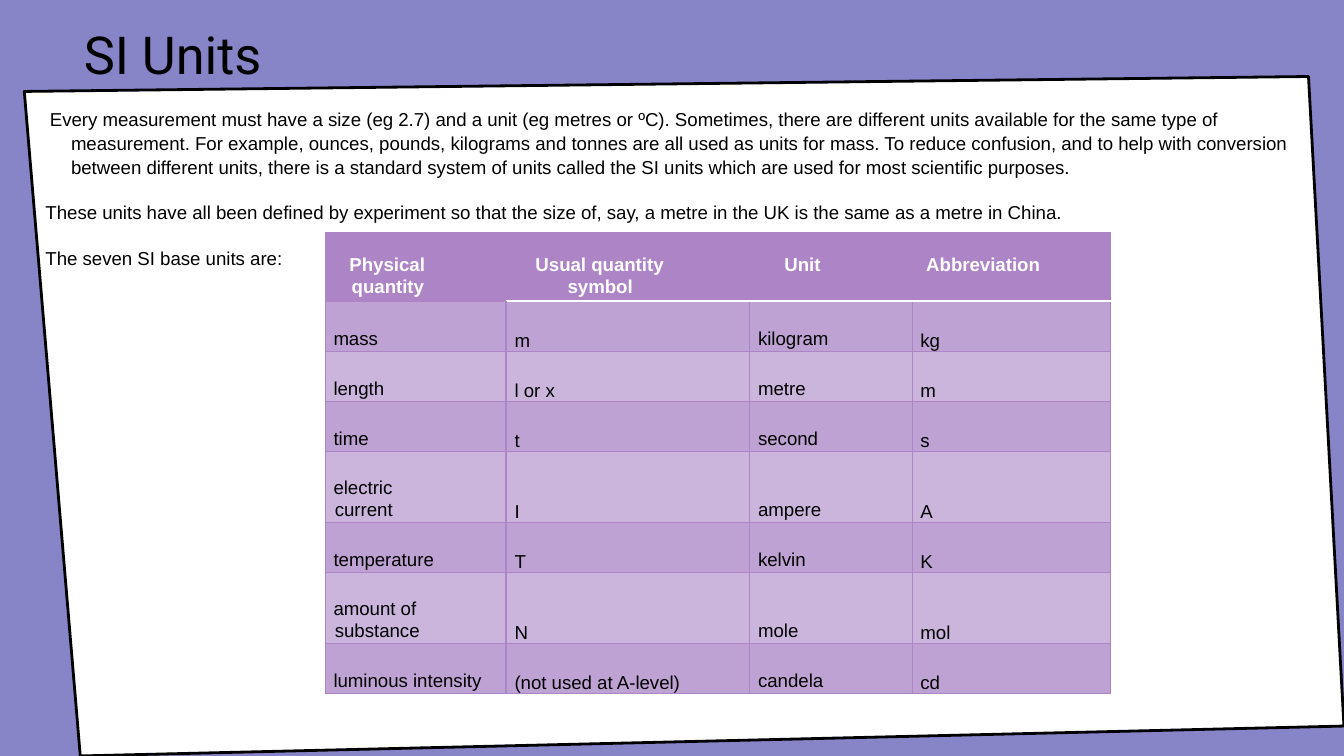
from lxml.etree import SubElement
from pptx import Presentation
from pptx.dml.color import RGBColor
from pptx.enum.text import MSO_ANCHOR, PP_ALIGN
from pptx.oxml.ns import qn
from pptx.util import Pt

COLORS = {
    "backdrop": "8784C7", "panel": "FFFFFF", "ink": "000000",
    "purple": "AD84C6", "dark_band": "BFA2D4", "light_band": "CBB5DC",
}
TITLE = "SI Units"
PARAGRAPHS = [
    "Every measurement must have a size (eg 2.7) and a unit (eg metres or ºC). Sometimes, there are "
    "different units available for the same type of measurement. For example, ounces, pounds, kilograms "
    "and tonnes are all used as units for mass. To reduce confusion, and to help with conversion between "
    "different units, there is a standard system of units called the SI units which are used for most "
    "scientific purposes.",
    "These units have all been defined by experiment so that the size of, say, a metre in the UK is the "
    "same as a metre in China.",
    "The seven SI base units are:",
]
UNITS = [
    ("Physical quantity", "Usual quantity symbol", "Unit", "Abbreviation"),
    ("mass", "m", "kilogram", "kg"),
    ("length", "l or x", "metre", "m"),
    ("time", "t", "second", "s"),
    ("electric current", "I", "ampere", "A"),
    ("temperature", "T", "kelvin", "K"),
    ("amount of substance", "N", "mole", "mol"),
    ("luminous intensity", "(not used at A-level)", "candela", "cd"),
]
WRAPPED = {"electric current", "amount of substance"}
PANEL_CORNERS = [(13.4, 48.8), (43, 404.6), (720, 389.2), (701.3, 40.8)]
COLUMN_WIDTHS = [97, 130.5, 87, 106.5]
BOTTOM_GAPS = [0.9, 0, 0.9, 0]
HEADER_HEIGHT, ROW_HEIGHT, WRAPPED_HEIGHT = 35.8, 26.8, 38


def rgb(name):
    return RGBColor.from_string(COLORS[name])


def write(paragraph, text, font="Arial", size=10, color="ink", bold=False,
          align=PP_ALIGN.LEFT, spacing=1.07, after=0, left=0, indent=0):
    """Fill a paragraph with one formatted run."""
    paragraph.alignment = align
    paragraph.line_spacing = spacing
    paragraph.space_before = Pt(0)
    paragraph.space_after = Pt(after)
    properties = paragraph._p.get_or_add_pPr()
    properties.set("marL", str(Pt(left)))
    properties.set("indent", str(Pt(indent)))
    run = paragraph.add_run()
    run.text = text
    run.font.name, run.font.size, run.font.bold = font, Pt(size), bold
    run.font.color.rgb = rgb(color)


def set_insets(frame, inset):
    frame.margin_left = frame.margin_right = frame.margin_top = frame.margin_bottom = Pt(inset)
    frame.word_wrap = True
    frame.vertical_anchor = MSO_ANCHOR.TOP


def set_border(cell, side, color="purple", width=0.5):
    line = SubElement(cell._tc.get_or_add_tcPr(), qn(f"a:ln{side}"), w=str(Pt(width)))
    fill = SubElement(line, qn("a:solidFill"))
    SubElement(fill, qn("a:srgbClr"), val=COLORS[color])


def add_panel(slide):
    builder = slide.shapes.build_freeform(*PANEL_CORNERS[0], scale=Pt(1))
    builder.add_line_segments(PANEL_CORNERS[1:], close=True)
    panel = builder.convert_to_shape()
    panel.shadow.inherit = False
    panel.fill.solid()
    panel.fill.fore_color.rgb = rgb("panel")
    panel.line.color.rgb = rgb("ink")
    panel.line.width = Pt(1.5)
    return panel


def add_title(slide):
    title = slide.shapes.title
    title.left, title.top, title.width, title.height = Pt(-3.6), Pt(8.6), Pt(192.2), Pt(58.3)
    set_insets(title.text_frame, 7.2)
    write(title.text_frame.paragraphs[0], TITLE, font="Roboto", size=28,
          align=PP_ALIGN.CENTER, spacing=0.9)


def add_explanation(slide):
    frame = slide.shapes.add_textbox(Pt(17.3), Pt(49.7), Pt(698.4), Pt(231)).text_frame
    set_insets(frame, 7.2)
    for number, text in enumerate(PARAGRAPHS):
        paragraph = frame.add_paragraph() if number else frame.paragraphs[0]
        write(paragraph, text, after=11.6, left=13.7, indent=-13.7 if number else -11.3)


def add_units(slide):
    heights = [HEADER_HEIGHT] + [
        WRAPPED_HEIGHT if row[0] in WRAPPED else ROW_HEIGHT for row in UNITS[1:]]
    table = slide.shapes.add_table(
        len(UNITS), len(COLUMN_WIDTHS), Pt(174.2), Pt(124.4),
        Pt(sum(COLUMN_WIDTHS)), Pt(sum(heights))).table
    table.horz_banding = False
    for column, width in zip(table.columns, COLUMN_WIDTHS):
        column.width = Pt(width)
    for r, (row, height) in enumerate(zip(UNITS, heights)):
        table.rows[r].height = Pt(height)
        header = r == 0
        band = "purple" if header else "dark_band" if r % 2 else "light_band"
        for c, text in enumerate(row):
            cell = table.cell(r, c)
            cell.margin_left = Pt(0)
            cell.margin_right = Pt(35 if header or text in WRAPPED else 0)
            cell.margin_top = Pt(11.3 if header else 0)
            cell.margin_bottom = Pt(0 if header else BOTTOM_GAPS[c])
            cell.vertical_anchor = MSO_ANCHOR.TOP if header else MSO_ANCHOR.BOTTOM
            write(cell.text_frame.paragraphs[0], text, color="panel" if header else "ink",
                  bold=header, align=PP_ALIGN.CENTER if header else PP_ALIGN.LEFT,
                  left=5.2, indent=-0.7)
            underlined = header and c > 0
            topped = r == 1 and c > 0
            set_border(cell, "L", width=1 if c == 1 and not header else 0.5)
            set_border(cell, "R", width=1 if c == 0 and not header else 0.5)
            set_border(cell, "T", "panel" if topped else "purple", 1 if topped else 0.5)
            set_border(cell, "B", "panel" if underlined else "purple", 1 if underlined else 0.5)
            cell.fill.solid()
            cell.fill.fore_color.rgb = rgb(band)


def main():
    deck = Presentation()
    deck.slide_width, deck.slide_height = Pt(720), Pt(405)
    slide = deck.slides.add_slide(deck.slide_layouts[5])
    slide.background.fill.solid()
    slide.background.fill.fore_color.rgb = rgb("backdrop")
    panel = add_panel(slide)
    slide.shapes.title._element.addprevious(panel._element)
    add_title(slide)
    add_explanation(slide)
    add_units(slide)
    deck.save("out.pptx")


if __name__ == "__main__":
    main()
